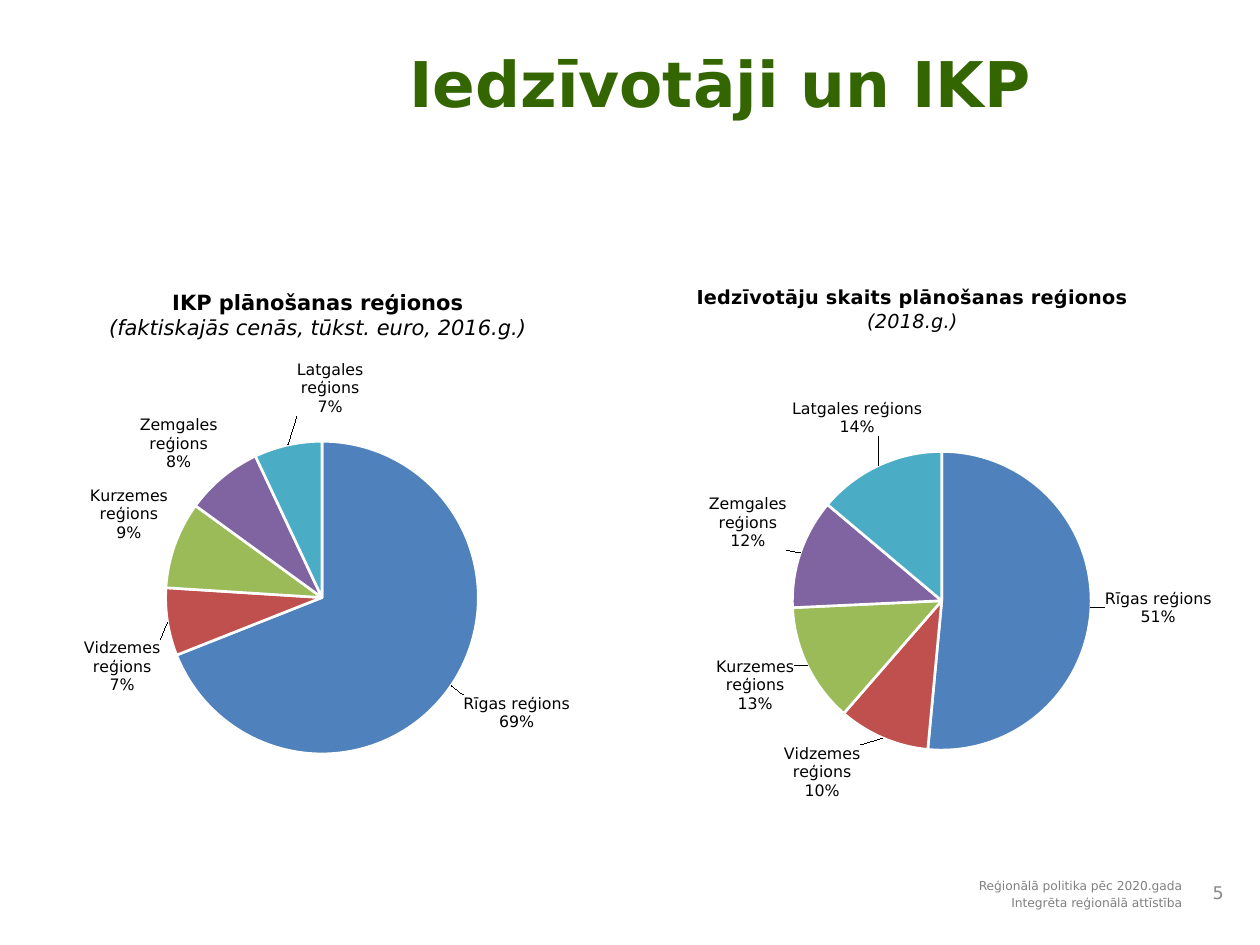
from dataclasses import dataclass
from typing import Any

from lxml import etree
from pptx import Presentation
from pptx.chart.data import CategoryChartData
from pptx.dml.color import RGBColor as Rgb
from pptx.enum.chart import XL_CHART_TYPE as ChartKind, XL_LABEL_POSITION as LabelPlace
from pptx.enum.text import MSO_ANCHOR as Anchor, PP_ALIGN as Align
from pptx.oxml import parse_xml
from pptx.oxml.ns import nsdecls, qn
from pptx.util import Inches, Pt

COLORS = {
    "title": "336600", "text": "000000", "footer": "808080", "number": "898989", "gap": "FFFFFF",
    "Rīgas": "4F81BD", "Vidzemes": "C0504D", "Kurzemes": "9BBB59",
    "Zemgales": "8064A2", "Latgales": "4BACC6",
}
REGIONS = ["Rīgas", "Vidzemes", "Kurzemes", "Zemgales", "Latgales"]
COLUMNS, ROWS = 100, 75


def manual_layout(x, y, size=None):
    edges = '<c:xMode val="edge"/><c:yMode val="edge"/>' if size else ""
    target = '<c:layoutTarget val="inner"/>' if size else ""
    extent = f'<c:w val="{size[0]}"/><c:h val="{size[1]}"/>' if size else ""
    return (f'<c:layout {nsdecls("c")}><c:manualLayout>{target}{edges}'
            f'<c:x val="{x}"/><c:y val="{y}"/>{extent}</c:manualLayout></c:layout>')


def title_layout(x, y):
    return (f'<c:layout {nsdecls("c")}><c:manualLayout><c:xMode val="edge"/><c:yMode val="edge"/>'
            f'<c:x val="{x}"/><c:y val="{y}"/></c:manualLayout></c:layout>')


def replace_layout(parent, xml, index):
    for old in parent.findall(qn("c:layout")):
        parent.remove(old)
    parent.insert(index, parse_xml(xml))


@dataclass
class Sheet:
    deck: Any
    page: Any
    face: str = "DejaVu Sans"

    def area(self, left, top, width, height):
        across, down = self.deck.slide_width / COLUMNS, self.deck.slide_height / ROWS
        return [round(v) for v in (left * across, top * down, width * across, height * down)]

    def style(self, font, size, color, bold=False, italic=False):
        font.name, font.size, font.bold, font.italic = self.face, Pt(size), bold, italic
        font.color.rgb = Rgb.from_string(COLORS[color])

    def title(self, text, place):
        box = self.page.shapes.title
        box.left, box.top, box.width, box.height = self.area(*place)
        box.text_frame.text = text
        box.text_frame.vertical_anchor = Anchor.TOP
        para = box.text_frame.paragraphs[0]
        para.alignment = Align.CENTER
        self.style(para.font, 36, "title", bold=True)

    def text(self, lines, place, size, color, anchor=Anchor.TOP):
        frame = self.page.shapes.add_textbox(*self.area(*place)).text_frame
        frame.word_wrap = True
        frame.vertical_anchor = anchor
        frame.text = "\n".join(lines)
        for index, para in enumerate(frame.paragraphs):
            para.alignment = Align.RIGHT
            if index:
                para.space_before = Pt(size * 0.2)
            self.style(para.font, size, color)

    def pie(self, place, values, heading, size, heading_at, plot_at, plot_size, shifts):
        data = CategoryChartData()
        data.categories = [f"{region} reģions" for region in REGIONS]
        data.add_series("Series 1", values)
        chart = self.page.shapes.add_chart(ChartKind.PIE, *self.area(*place), data).chart
        chart.has_legend = False
        self.style(chart.font, 9, "text")
        self.heading(chart, heading, size, heading_at)
        plot_area = chart.plots[0]._element.getparent()
        replace_layout(plot_area, manual_layout(*plot_at, plot_size), 0)
        plot = chart.plots[0]
        plot.vary_by_categories = True
        series = plot.series[0]
        for index, region in enumerate(REGIONS):
            form = series.points[index].format
            form.fill.solid()
            form.fill.fore_color.rgb = Rgb.from_string(COLORS[region])
            form.line.color.rgb = Rgb.from_string(COLORS["gap"])
            form.line.width = Pt(1.5)
        self.labels(series, shifts)

    def heading(self, chart, lines, size, place):
        chart.has_title = True
        title = chart.chart_title
        title.include_in_layout = False
        frame = title.text_frame
        frame.text = "\n".join(lines)
        for index, para in enumerate(frame.paragraphs):
            para.alignment = Align.CENTER
            self.style(para.font, size, "text", bold=index == 0, italic=index > 0)
            self.style(para.runs[0].font, size, "text", bold=index == 0, italic=index > 0)
        replace_layout(title._element, title_layout(*place), 1)

    def labels(self, series, shifts):
        labels = series.data_labels
        labels.show_value = False
        labels.show_percentage = labels.show_category_name = True
        labels.number_format, labels.number_format_is_linked = "0%", False
        labels.position = LabelPlace.OUTSIDE_END
        self.style(labels.font, 9, "text")
        root = labels._element
        separator = etree.Element(qn("c:separator"))
        separator.text = "\n"
        root.find(qn("c:showBubbleSize")).addnext(separator)
        flags = "".join(
            f'<c:show{name} val="{int(name in ("CatName", "Percent"))}"/>'
            for name in ("LegendKey", "Val", "CatName", "SerName", "Percent", "BubbleSize"))
        for order, (region, shift) in enumerate(shifts.items()):
            root.insert(order, parse_xml(
                f'<c:dLbl {nsdecls("c")}><c:idx val="{REGIONS.index(region)}"/>'
                f'{manual_layout(*shift)}<c:dLblPos val="outEnd"/>{flags}'
                "<c:separator>\n</c:separator></c:dLbl>"))


def main():
    deck = Presentation()
    deck.slide_width, deck.slide_height = Inches(10), Inches(7.5)
    sheet = Sheet(deck, deck.slides.add_slide(deck.slide_layouts[5]))
    sheet.title("Iedzīvotāji un IKP", (19.3, 3, 75.7, 12.5))
    sheet.text(["5"], (93.3, 69.2, 4.8, 3.3), 10, "number", Anchor.MIDDLE)
    sheet.text(["Reģionālā politika pēc 2020.gada", "Integrēta reģionālā attīstība"],
               (54.8, 69.2, 40, 3.3), 7, "footer")
    sheet.pie((1.3, 20.9, 47.1, 42.8), (69, 7, 9, 8, 7),
              ["IKP plānošanas reģionos", "(faktiskajās cenās, tūkst. euro, 2016.g.)"],
              12, (0.15, 0.04), (0.25, 0.33), (0.53, 0.58),
              {"Rīgas": (0.01, 0.01), "Vidzemes": (0, 0.03), "Latgales": (0.13, -0.04)})
    sheet.pie((45.5, 20, 52.7, 44.3), (52, 10, 13, 12, 14),
              ["Iedzīvotāju skaits plānošanas reģionos", "(2018.g.)"],
              11, (0.18, 0.05), (0.33, 0.33), (0.45, 0.59),
              {"Rīgas": (0.01, 0), "Vidzemes": (-0.03, 0), "Kurzemes": (-0.01, -0.02),
               "Zemgales": (-0.01, 0), "Latgales": (0.07, -0.04)})
    deck.save("out.pptx")


if __name__ == "__main__":
    main()
